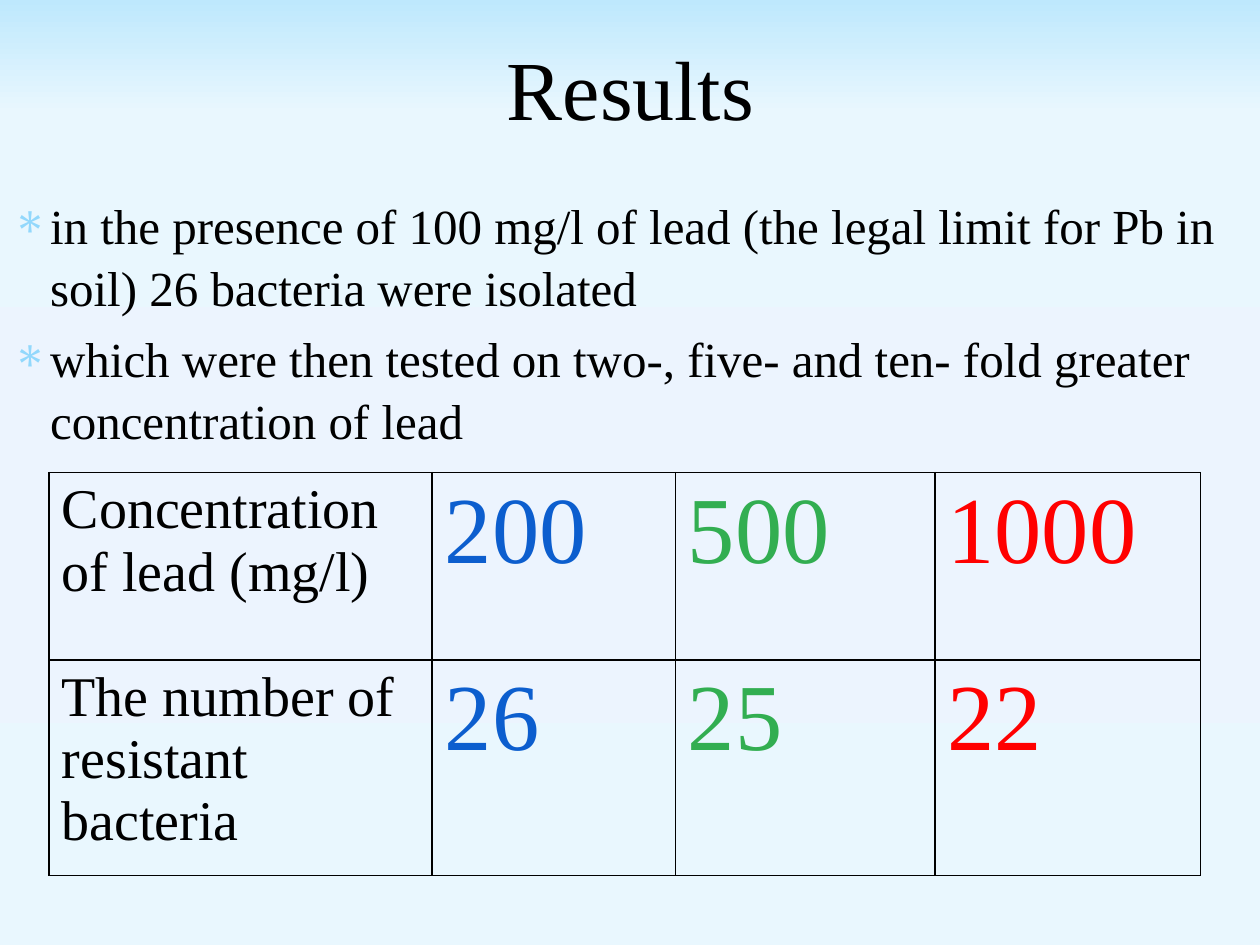
from lxml import etree
from pptx import Presentation
from pptx import util as u
from pptx.dml import color
from pptx.enum import text
from pptx.oxml import ns

FONT = "Times New Roman"
BLACK, BLUE, GREEN, RED = "000000", "0C5ECE", "32AE51", "FF0000"
BACKGROUND = [(0, "BEE8FD"), (12, "E9F7FE"), (53, "ECF4FE"), (100, "E9F7FE")]
FINDINGS = [
    "in the presence of 100 mg/l of lead (the legal limit for Pb in soil) 26 bacteria were isolated",
    "which were then tested on two-, five- and ten- fold greater concentration of lead",
]
ROWS = [
    ["Concentration of lead (mg/l)", "200", "500", "1000"],
    ["The number of resistant bacteria", "26", "25", "22"],
]
COLUMN_FORMATS = [(32, BLACK), (54, BLUE), (54, GREEN), (54, RED)]


def rgb(value):
    return color.RGBColor.from_string(value)


def add_element(parent, tag, **attributes):
    return etree.SubElement(parent, ns.qn(tag), attributes)


def add_color(parent, value):
    add_element(parent, "a:srgbClr", val=value)


def write(para, wording, size, hue=BLACK, align=None, before=None, spacing=None):
    para.alignment = align
    para.space_before = before
    para.line_spacing = spacing
    span = para.add_run()
    span.text = wording
    span.font.name = FONT
    span.font.size = u.Pt(size)
    span.font.color.rgb = rgb(hue)


class ResultsSlide:
    bullet, bullet_color, border_color = "∗", "92D8FC", BLACK

    def __init__(self, deck):
        self.page = deck.slides.add_slide(deck.slide_layouts[6])

    def background(self, stops):
        fill = self.page.background.fill
        fill.gradient()
        fill.gradient_angle = 270
        stop_list = next(self.page.element.iter(ns.qn("a:gsLst")))
        for stop in list(stop_list):
            stop_list.remove(stop)
        for percent, hue in stops:
            add_color(add_element(stop_list, "a:gs", pos=str(percent * 1000)), hue)

    def text_box(self, left, top, width, height, anchor):
        box = self.page.shapes.add_textbox(*map(u.Inches, (left, top, width, height)))
        frame = box.text_frame
        frame.word_wrap = True
        frame.vertical_anchor = anchor
        return frame

    def title(self, wording):
        frame = self.text_box(0.16, 0.23, 9.69, 0.91, text.MSO_ANCHOR.BOTTOM)
        write(frame.paragraphs[0], wording, 48, align=text.PP_ALIGN.CENTER)

    def bullets(self, items):
        frame = self.text_box(0, 1.48, 10, 6.02, text.MSO_ANCHOR.TOP)
        for index, item in enumerate(items):
            para = frame.add_paragraph() if index else frame.paragraphs[0]
            write(para, item, 28, before=u.Pt(5.6), spacing=1.05)
            properties = para._p.get_or_add_pPr()
            properties.set("marL", str(u.Inches(0.3)))
            properties.set("indent", str(u.Inches(-0.3)))
            add_color(add_element(properties, "a:buClr"), self.bullet_color)
            add_element(properties, "a:buFont", typeface="Symbol")
            add_element(properties, "a:buChar", char=self.bullet)

    def borders(self, cell):
        properties = cell._tc.get_or_add_tcPr()
        for position, side in enumerate(("a:lnL", "a:lnR", "a:lnT", "a:lnB")):
            line = etree.Element(ns.qn(side), w=str(u.Pt(1)))
            add_color(add_element(line, "a:solidFill"), self.border_color)
            properties.insert(position, line)

    def table(self, rows, formats, widths, heights):
        place = map(u.Inches, (0.39, 3.75, sum(widths), sum(heights)))
        table = self.page.shapes.add_table(len(rows), len(widths), *place).table
        table.first_row = table.horz_banding = False
        for column, width in zip(table.columns, widths):
            column.width = u.Inches(width)
        for row, height, values in zip(table.rows, heights, rows):
            row.height = u.Inches(height)
            for cell, value, (size, hue) in zip(row.cells, values, formats):
                cell.fill.background()
                self.borders(cell)
                write(cell.text_frame.paragraphs[0], value, size, hue)


def main():
    deck = Presentation()
    deck.slide_width, deck.slide_height = u.Inches(10), u.Inches(7.5)
    slide = ResultsSlide(deck)
    slide.background(BACKGROUND)
    slide.bullets(FINDINGS)
    slide.table(ROWS, COLUMN_FORMATS, [3.04, 1.93, 2.06, 2.11], [1.49, 1.71])
    slide.title("Results")
    deck.save("out.pptx")


if __name__ == "__main__":
    main()
